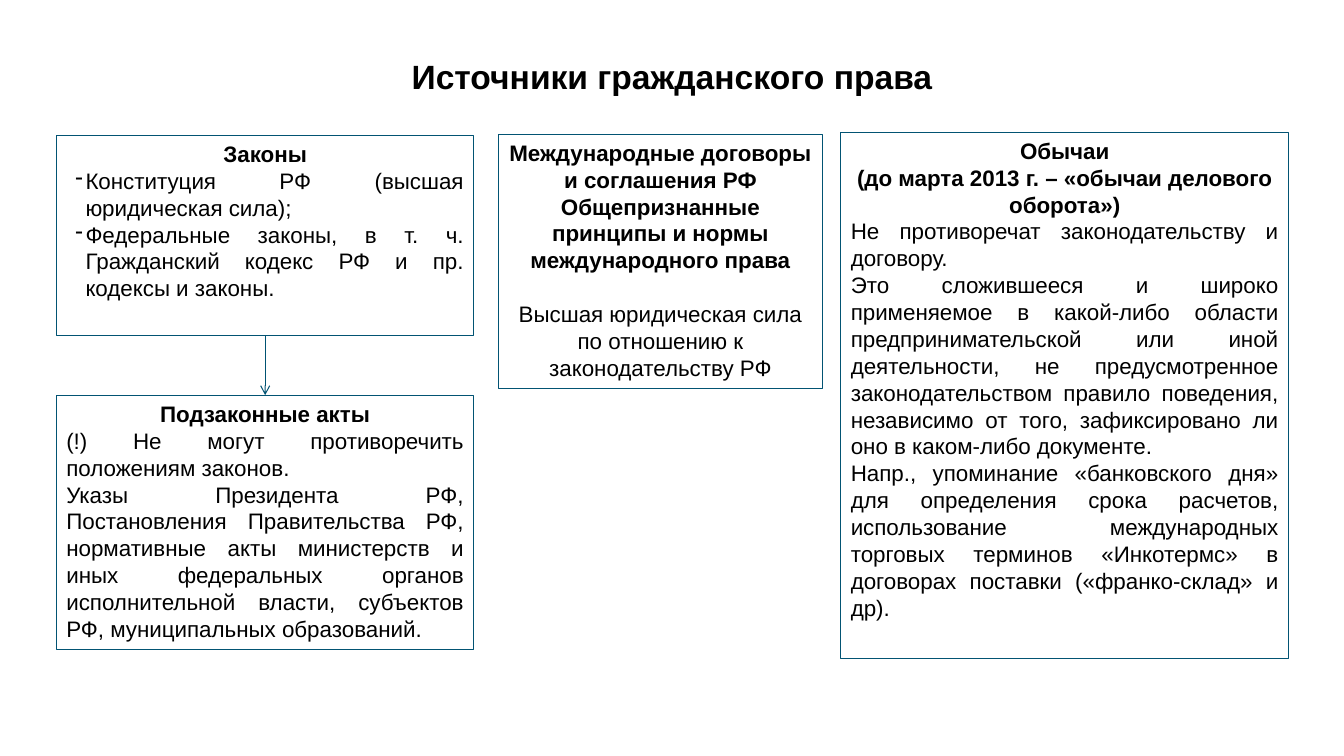
from dataclasses import dataclass

import pptx
import pptx.util
import pptx.dml.color
import pptx.enum.shapes
import pptx.enum.text
import pptx.oxml
import pptx.oxml.ns
from pptx.util import Inches

COLORS = {"text": "000000", "border": "025373", "arrow": "005272"}
ALIGN = pptx.enum.text.PP_ALIGN


@dataclass
class Line:
    text: str
    bold: bool = False
    align: ALIGN = ALIGN.JUSTIFY
    dash: bool = False
    gap_before: float = 0


@dataclass
class Card:
    left: float
    top: float
    width: float
    height: float
    lines: list[Line]


def heading(text: str) -> Line:
    return Line(text, bold=True, align=ALIGN.CENTER)


TITLE = heading("Источники гражданского права")

CARDS = [
    Card(0.56, 1.34, 4.14, 1.99, [
        heading("Законы"),
        Line("Конституция РФ (высшая юридическая сила);", dash=True),
        Line("Федеральные законы, в т. ч. Гражданский кодекс РФ и пр. "
             "кодексы и законы.", dash=True),
    ]),
    Card(0.56, 3.92, 4.14, 2.52, [
        heading("Подзаконные акты"),
        Line("(!) Не могут противоречить положениям законов."),
        Line("Указы Президента РФ, Постановления Правительства РФ, "
             "нормативные акты министерств и иных федеральных органов "
             "исполнительной власти, субъектов РФ, муниципальных образований."),
    ]),
    Card(4.94, 1.33, 3.22, 2.52, [
        heading("Международные договоры и соглашения РФ"),
        heading("Общепризнанные принципы и нормы международного права"),
        Line("Высшая юридическая сила по отношению к законодательству РФ",
             align=ALIGN.CENTER, gap_before=19.2),
    ]),
    Card(8.34, 1.31, 4.44, 5.22, [
        heading("Обычаи"),
        heading("(до марта 2013 г. – «обычаи делового оборота»)"),
        Line("Не противоречат законодательству и договору."),
        Line("Это сложившееся и широко применяемое в какой-либо области "
             "предпринимательской или иной деятельности, не предусмотренное "
             "законодательством правило поведения, независимо от того, "
             "зафиксировано ли оно в каком-либо документе."),
        Line("Напр., упоминание «банковского дня» для определения срока "
             "расчетов, использование международных торговых терминов "
             "«Инкотермс» в договорах поставки («франко-склад» и др)."),
    ]),
]


def color(name: str) -> pptx.dml.color.RGBColor:
    return pptx.dml.color.RGBColor.from_string(COLORS[name])


def add_dash(para) -> None:
    properties = para._p.get_or_add_pPr()
    properties.set("marL", str(Inches(0.19)))
    properties.set("indent", str(Inches(-0.1)))
    bullet = pptx.oxml.parse_xml(
        f'<a:buChar {pptx.oxml.ns.nsdecls("a")} char="-"/>')
    properties.append(bullet)


def write_lines(box, lines: list[Line], size: float) -> None:
    frame = box.text_frame
    frame.word_wrap = True
    frame.vertical_anchor = pptx.enum.text.MSO_ANCHOR.TOP
    for index, line in enumerate(lines):
        para = frame.add_paragraph() if index else frame.paragraphs[0]
        if line.dash:
            add_dash(para)
        para.alignment = line.align
        if line.gap_before:
            para.space_before = pptx.util.Pt(line.gap_before)
        span = para.add_run()
        span.text = line.text
        formats = {"name": "Arial", "size": pptx.util.Pt(size), "bold": line.bold}
        for name, value in formats.items():
            setattr(span.font, name, value)
        span.font.color.rgb = color("text")


def add_card(page, card: Card) -> None:
    box = page.shapes.add_shape(
        pptx.enum.shapes.MSO_SHAPE.RECTANGLE, Inches(card.left),
        Inches(card.top), Inches(card.width), Inches(card.height))
    box.shadow.inherit = False
    box.fill.background()
    box.line.color.rgb = color("border")
    box.line.width = pptx.util.Pt(0.75)
    write_lines(box, card.lines, 16)


def add_arrow(page, upper: Card, lower: Card) -> None:
    middle = Inches(upper.left + upper.width / 2)
    arrow = page.shapes.add_connector(
        pptx.enum.shapes.MSO_CONNECTOR.STRAIGHT, middle,
        Inches(upper.top + upper.height), middle, Inches(lower.top))
    arrow.line.color.rgb = color("arrow")
    arrow.line.width = pptx.util.Pt(0.75)
    namespace = pptx.oxml.ns.nsdecls("a")
    arrow.line._get_or_add_ln().append(
        pptx.oxml.parse_xml(f'<a:tailEnd {namespace} type="arrow"/>'))
    arrow._element.spPr.append(pptx.oxml.parse_xml(f"<a:effectLst {namespace}/>"))


def main() -> None:
    deck = pptx.Presentation()
    deck.slide_width, deck.slide_height = Inches(13.33), Inches(7.5)
    page = deck.slides.add_slide(deck.slide_layouts[6])

    # Title
    title_box = page.shapes.add_textbox(
        Inches(3.28), Inches(0.51), Inches(6.77), Inches(0.5))
    write_lines(title_box, [TITLE], 24)

    # Cards with the sources of law
    for card in CARDS:
        add_card(page, card)

    # Arrow from laws to subordinate acts
    add_arrow(page, CARDS[0], CARDS[1])

    deck.save("out.pptx")


if __name__ == "__main__":
    main()
